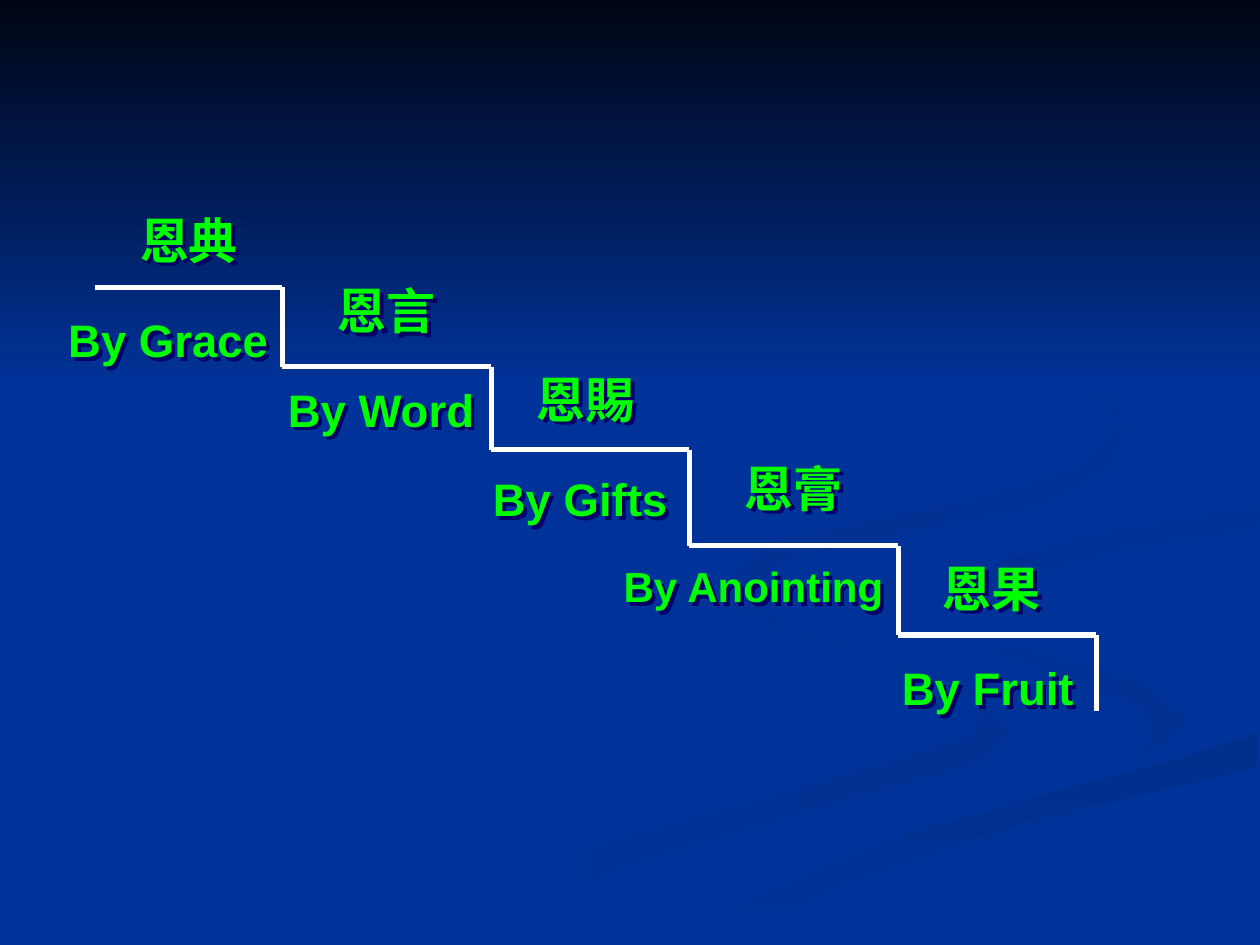
from itertools import pairwise
from lxml.etree import SubElement
from pptx import Presentation
from pptx.dml.color import RGBColor
from pptx.enum.shapes import MSO_CONNECTOR, MSO_SHAPE
from pptx.enum.text import MSO_AUTO_SIZE, PP_ALIGN
from pptx.oxml.ns import qn
from pptx.util import Pt

PX = 9144  # EMU per px, 100 px to the inch
COLORS = {"blue": "003399", "night": "000514", "green": "00FF00",
          "white": "FFFFFF", "shadow": "000066", "wave": "003193",
          "band": "002F8C", "bend": "003091", "curl": "002F8E"}

# Background ribbons: colours from start to end, clockwise angle, outline
RIBBONS = [
    (("blue", "wave"), 0, [
        (781, 553), (682, 519), (594, 485), (575, 459), (581, 484), (679, 519),
        (781, 556), (774, 583), (652, 620), (458, 674), (300, 749), (361, 749),
        (499, 687), (676, 634), (780, 605), (800, 581)]),
    (("blue", "wave"), 45, [
        (943, 570), (905, 540), (774, 503), (724, 464), (746, 500), (838, 536),
        (907, 562), (914, 589), (894, 605), (937, 586)]),
    (("band", "blue"), 90, [
        (503, 749), (571, 749), (670, 702), (821, 651), (998, 609), (998, 581),
        (936, 602), (764, 647), (630, 693)]),
    (("blue",), 0, [
        (725, 464), (759, 498), (905, 540), (943, 570), (919, 597), (704, 655),
        (477, 749), (519, 747), (696, 669), (999, 581), (999, 538), (848, 503),
        (781, 463), (835, 430), (999, 402), (999, 387), (788, 422)]),
    (("bend", "blue"), 45, [
        (781, 460), (791, 478), (826, 496), (805, 476), (828, 453), (896, 435),
        (998, 420), (998, 402), (865, 424), (799, 442)]),
    (("curl", "blue"), 45, [
        (683, 430), (825, 402), (883, 370), (893, 335), (864, 291), (762, 233),
        (846, 279), (889, 335), (861, 370), (763, 398), (615, 429), (577, 462),
        (622, 500), (593, 470), (624, 444)]),
]

STAIR_X = [75, 224, 390, 547, 713, 870]
STAIR_Y = [228, 291, 357, 433, 504, 564]

# Each step: upper text, its left and top; lower text, its left, top, width, size
LABELS = [
    ("恩典", 83, 162, "By Grace", 43, 243, 181, 26),
    ("恩言", 240, 218, "By Word", 216, 298, 173, 26),
    ("恩賜", 398, 288, "By Gifts", 374, 369, 173, 26),
    ("恩膏", 563, 359, "By Anointing", 476, 440, 244, 24),
    ("恩果", 720, 438, "By Fruit", 705, 519, 158, 26),
]


def rgb(name):
    return RGBColor.from_string(COLORS[name])


def paint(sp, colors, angle):
    """Fill with one plain colour or a two-colour gradient, without outline."""
    sp.shadow.inherit = False
    sp.line.fill.background()
    if len(colors) == 1:
        sp.fill.solid()
        sp.fill.fore_color.rgb = rgb(colors[0])
        return
    sp.fill.gradient()
    sp.fill.gradient_angle = (360 - angle) % 360
    for stop, name in zip(sp.fill.gradient_stops, colors):
        stop.color.rgb = rgb(name)


def add_ribbon(s, colors, angle, points):
    builder = s.shapes.build_freeform(*points[0], scale=PX)
    builder.add_line_segments(points[1:], close=True)
    paint(builder.convert_to_shape(), colors, angle)


def add_sky(s):
    sky = s.shapes.add_shape(MSO_SHAPE.RECTANGLE, 0, 0, 1000 * PX, 308 * PX)
    paint(sky, ("night", "blue"), 90)


def add_line(s, *ends):
    line = s.shapes.add_connector(MSO_CONNECTOR.STRAIGHT, *(v * PX for v in ends))
    line.line.color.rgb = rgb("white")
    line.line.width = Pt(3)
    SubElement(line._element.spPr, qn("a:effectLst"))


def add_stairs(s):
    for (left, top), (right, bottom) in pairwise(zip(STAIR_X, STAIR_Y)):
        add_line(s, left, top, right, top)
        add_line(s, right, top, right, bottom)


def add_text_shadow(sp):
    """Give an unfilled box a shadow, which falls from its letters."""
    effects = SubElement(sp._element.spPr, qn("a:effectLst"))
    shadow = SubElement(effects, qn("a:outerShdw"), dist="35921", dir="2700000",
                        algn="ctr", rotWithShape="0")
    SubElement(shadow, qn("a:srgbClr"), val=COLORS["shadow"])


def add_label(s, text, left, top, width=134, size=28):
    height = 2 * size + 1
    sp = s.shapes.add_textbox(*(v * PX for v in (left, top, width, height)))
    add_text_shadow(sp)
    tf = sp.text_frame
    tf.word_wrap = True
    tf.auto_size = MSO_AUTO_SIZE.SHAPE_TO_FIT_TEXT
    p = tf.paragraphs[0]
    p.alignment = PP_ALIGN.CENTER
    r = p.add_run()
    r.text = text
    for key, value in {"name": "Arial", "size": Pt(size), "bold": True}.items():
        setattr(r.font, key, value)
    r.font.color.rgb = rgb("green")


def main():
    prs = Presentation()
    prs.slide_width, prs.slide_height = 1000 * PX, 750 * PX
    s = prs.slides.add_slide(prs.slide_layouts[6])
    s.background.fill.solid()
    s.background.fill.fore_color.rgb = rgb("blue")
    for ribbon in RIBBONS:
        add_ribbon(s, *ribbon)
    add_sky(s)
    add_stairs(s)
    for label in LABELS:
        add_label(s, *label[:3])
        add_label(s, *label[3:])
    prs.save("out.pptx")


if __name__ == "__main__":
    main()
